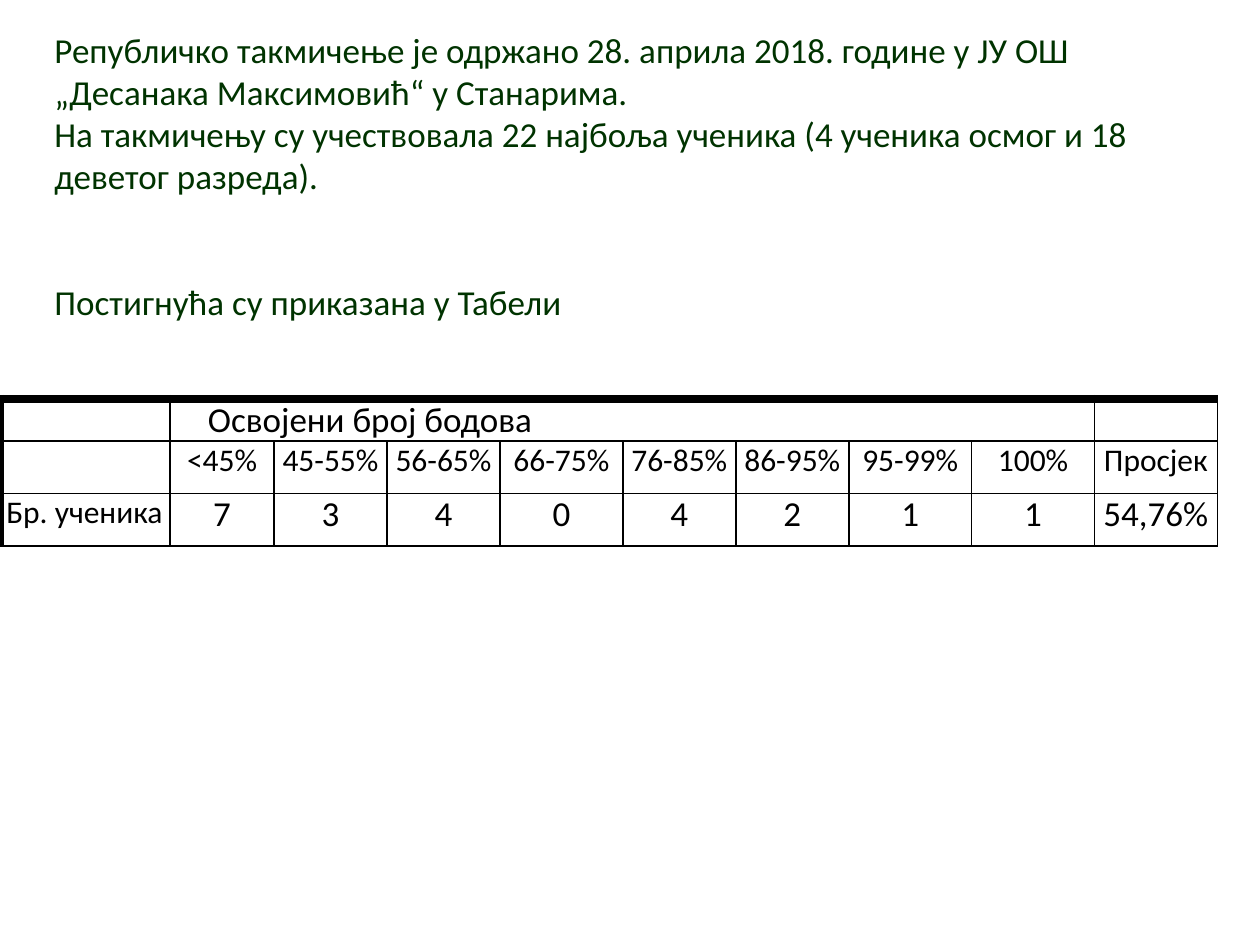
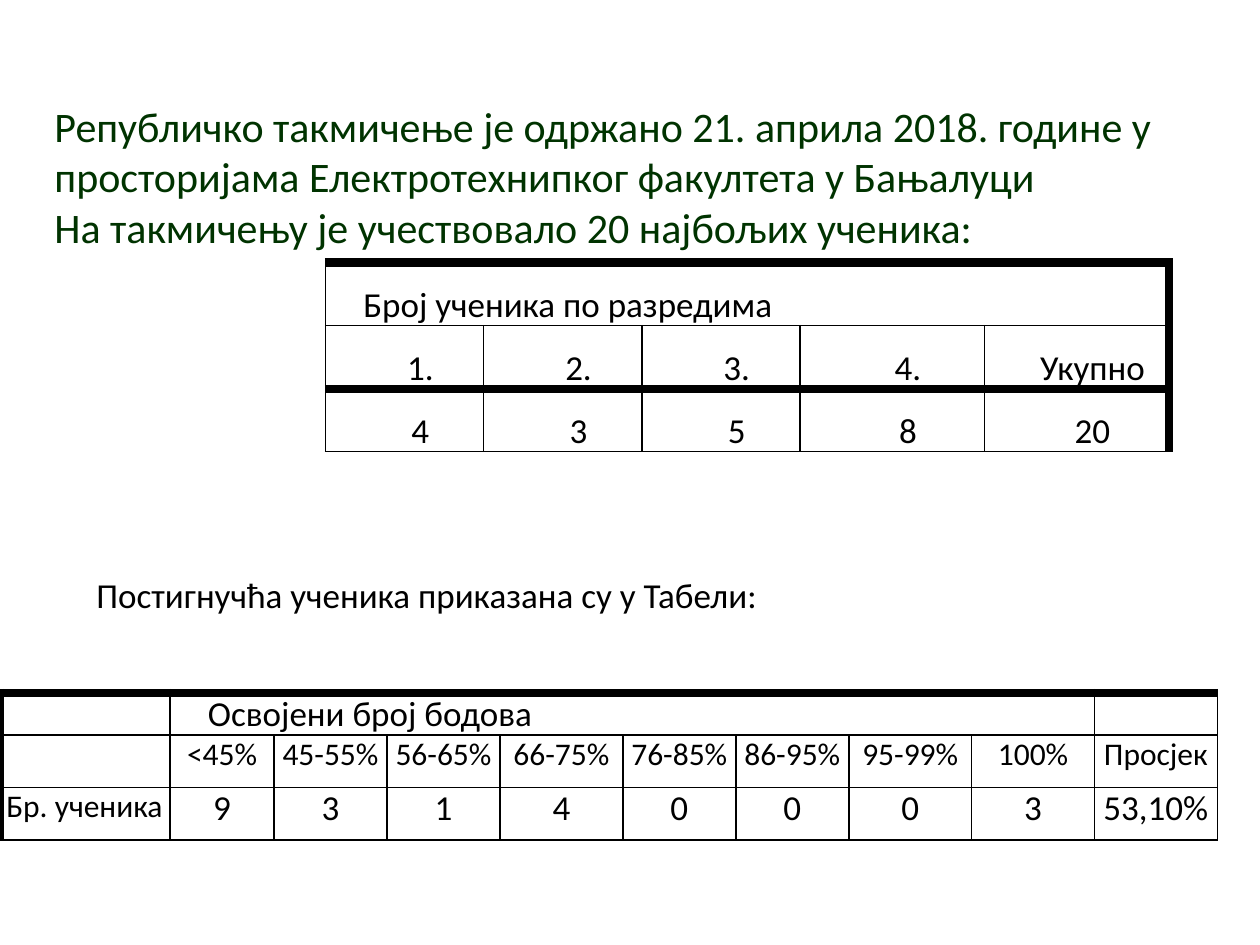
from dataclasses import dataclass

from lxml import etree
from pptx import Presentation
from pptx.dml.color import RGBColor
from pptx.enum.text import MSO_ANCHOR, MSO_AUTO_SIZE, PP_ALIGN
from pptx.oxml.ns import qn
from pptx.util import Pt

LEFT, CENTER = PP_ALIGN.LEFT, PP_ALIGN.CENTER
TOP, MIDDLE = MSO_ANCHOR.TOP, MSO_ANCHOR.MIDDLE
GROW = MSO_AUTO_SIZE.SHAPE_TO_FIT_TEXT


@dataclass(frozen=True)
class Theme:
    font: str = "Calibri"
    green: RGBColor = RGBColor(0x00, 0x33, 0x00)
    black: RGBColor = RGBColor(0x00, 0x00, 0x00)
    small: int = 18
    body: int = 20
    large: int = 24
    thin: float = 1
    heavy: float = 5.25


theme = Theme()


def add_text(slide, box, lines, size, color, anchor=TOP, last_gap=0):
    frame = slide.shapes.add_textbox(*map(Pt, box)).text_frame
    frame.word_wrap = True
    frame.auto_size = GROW
    frame.vertical_anchor = anchor
    frame.text = "\n".join(lines)
    if last_gap:
        frame.paragraphs[-1].space_before = Pt(last_gap)
    for paragraph in frame.paragraphs:
        font = paragraph.runs[0].font
        font.name, font.size, font.color.rgb = theme.font, Pt(size), color


def add_grid(slide, left, top, widths, heights, rows, merge, heavy, style):
    """heavy(edge, line) marks thick borders; style(row, col) gives
    size, alignment, left margin, first-line indent and line spacing."""
    table = slide.shapes.add_table(len(heights), len(widths), Pt(left), Pt(top),
                                   Pt(sum(widths)), Pt(sum(heights))).table
    table.first_row = table.horz_banding = False
    for column, width in zip(table.columns, widths):
        column.width = Pt(width)
    for table_row, height in zip(table.rows, heights):
        table_row.height = Pt(height)
    table.cell(0, merge[0]).merge(table.cell(0, merge[1]))

    for r, values in enumerate(rows):
        for c, value in enumerate(values):
            cell = table.cell(r, c)
            cell.margin_left = cell.margin_right = Pt(3.6)
            cell.margin_top = cell.margin_bottom = 0

            # Borders, numbered by the grid line they lie on
            right = c + (cell.span_width if cell.is_merge_origin else 1)
            edges = (("lnL", "v", c), ("lnR", "v", right),
                     ("lnT", "h", r), ("lnB", "h", r + 1))
            for tag, direction, line in edges:
                weight = theme.heavy if heavy(direction, line) else theme.thin
                border = etree.SubElement(cell._tc.get_or_add_tcPr(), qn(f"a:{tag}"), w=str(Pt(weight)))
                fill = etree.SubElement(border, qn("a:solidFill"))
                etree.SubElement(fill, qn("a:srgbClr"), val=str(theme.black))
            cell.fill.background()

            # Text
            if not value:
                continue
            size, align, margin, indent, spacing = style(r, c)
            cell.text_frame.text = value
            paragraph = cell.text_frame.paragraphs[0]
            properties = paragraph._p.get_or_add_pPr()
            properties.set("marL", str(Pt(margin)))
            properties.set("indent", str(Pt(indent)))
            paragraph.alignment = align
            paragraph.line_spacing = spacing
            font = paragraph.runs[0].font
            font.name, font.size, font.color.rgb = theme.font, Pt(size), theme.black


prs = Presentation()
prs.slide_width, prs.slide_height = Pt(720), Pt(540)
blank = prs.slide_layouts[6]
primary, secondary = (prs.slides.add_slide(blank) for _ in range(2))

# Introductions
add_text(primary, (24, 12, 660, 177), [
    "Републичко такмичење је одржано 28. априла 2018. године у ЈУ ОШ „Десанака Максимовић“ у Станарима.",
    "На такмичењу су учествовала 22 најбоља ученика (4 ученика осмог и 18 деветог разреда).",
    "Постигнућа су приказана у Табели",
], theme.body, theme.green, MIDDLE, last_gap=48)
add_text(secondary, (24, 53.3, 660, 94.5), [
    "Републичко такмичење је одржано 21. априла 2018. године у просторијама Електротехнипког факултета у Бањалуци",
    "На такмичењу је учествовало 20 најбољих ученика:",
], theme.large, theme.green, MIDDLE)

# Points won, one table on each slide
bands = ["<45%", "45-55%", "56-65%", "66-75%", "76-85%", "86-95%", "95-99%", "100%"]
points_widths = [97.2, 59.4, 64.6, 64.6, 70.2, 64.6, 64.6, 70.2, 70.2, 70.2]


def points_style(row, col):
    if row == 0:
        return theme.body, LEFT, 36, -18, 1
    size = theme.body if row == 2 and col else theme.small
    return size, CENTER if col else LEFT, 35.3, -35.3, 1


for slide, top, counts, average in (
    (primary, 228, [7, 3, 4, 0, 4, 2, 1, 1], "54,76%"),
    (secondary, 396, [9, 3, 1, 4, 0, 0, 0, 3], "53,10%"),
):
    points_rows = [
        ["", "Освојени број бодова"] + [""] * 8,
        ["", *bands, "Просјек"],
        ["Бр. ученика", *map(str, counts), average],
    ]
    add_grid(slide, 0, top, points_widths, [24, 30, 30], points_rows, (1, 8),
             lambda direction, line: line == 0, points_style)

# Pupils by grade
grade_rows = [
    ["Број ученика по разредима"] + [""] * 4,
    ["1.", "2.", "3.", "4.", "Укупно"],
    ["4", "3", "5", "8", "20"],
]
add_grid(secondary, 186, 150, [90.4] * 3 + [105.4] * 2, [36] * 3, grade_rows, (0, 4),
         lambda direction, line: (direction, line) in (("h", 0), ("h", 2), ("v", 5)),
         lambda row, col: (theme.body, CENTER if row else LEFT, 36, -18, 1.5))

# Caption above the second points table
add_text(secondary, (48, 324, 474, 31.5), ["Постигнучћа ученика приказана су у Табели:"],
         theme.body, theme.black)

prs.save("out.pptx")
